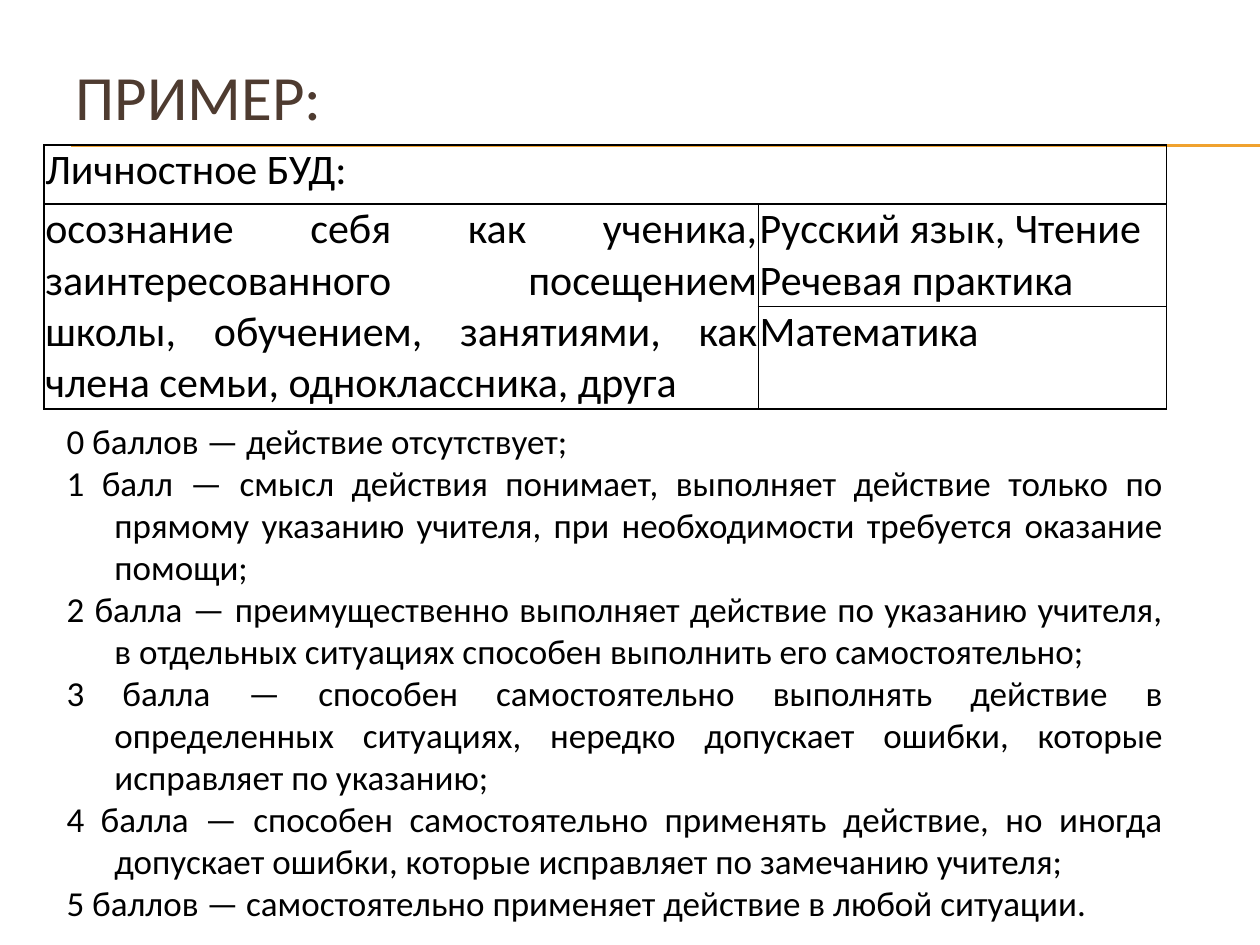
import dataclasses

import pptx
import pptx.dml.color
import pptx.enum.shapes
import pptx.enum.text
import pptx.oxml.ns
import pptx.util
from lxml import etree

RGB = pptx.dml.color.RGBColor
Inches = pptx.util.Inches
Pt = pptx.util.Pt
ALIGN = pptx.enum.text.PP_ALIGN
ANCHOR = pptx.enum.text.MSO_ANCHOR
qn = pptx.oxml.ns.qn


@dataclasses.dataclass(frozen=True)
class Theme:
    font: str = "Calibri"
    title_size: int = 36
    table_size: int = 24
    body_size: int = 20
    title: str = "4E3B30"
    text: str = "000000"
    rule: str = "F0A22E"
    rule_width: float = 0.75
    border_width: float = 1


THEME = Theme()
WIDTH, HEIGHT = 10, 7.5
COLUMNS = (5.67, 3.24)
ROWS = (0.47, 0.81, 0.81)
HANGING = 0.38

SKILL = (
    "осознание себя как ученика, заинтересованного посещением школы, "
    "обучением, занятиями, как члена семьи, одноклассника, друга"
)
SCALE = (
    "0 баллов — действие отсутствует;",
    "1 балл — смысл действия понимает, выполняет действие только по прямому "
    "указанию учителя, при необходимости требуется оказание помощи;",
    "2 балла — преимущественно выполняет действие по указанию учителя, "
    "в отдельных ситуациях способен выполнить его самостоятельно;",
    "3 балла — способен самостоятельно выполнять действие в определенных "
    "ситуациях, нередко допускает ошибки, которые исправляет по указанию;",
    "4 балла — способен самостоятельно применять действие, но иногда "
    "допускает ошибки, которые исправляет по замечанию учителя;",
    "5 баллов — самостоятельно применяет действие в любой ситуации.",
)


def write(tf, text, size, color, align):
    tf.text = text
    for p in tf.paragraphs:
        p.alignment = align
        for r in p.runs:
            r.font.name = THEME.font
            r.font.size = Pt(size)
            r.font.color.rgb = RGB.from_string(color)


def add_rule(s, y):
    line = s.shapes.add_connector(
        pptx.enum.shapes.MSO_CONNECTOR.STRAIGHT,
        Inches(0.56), Inches(y), Inches(WIDTH), Inches(y))
    line.line.color.rgb = RGB.from_string(THEME.rule)
    line.line.width = Pt(THEME.rule_width)
    etree.SubElement(line._element.spPr, qn("a:effectLst"))


def set_title(s, text):
    title = s.shapes.title
    title.left, title.top = Inches(0.05 * WIDTH), Inches(0.13)
    title.width, title.height = Inches(0.9 * WIDTH), Inches(1.25)
    title.text_frame.vertical_anchor = ANCHOR.MIDDLE
    write(title.text_frame, text, THEME.title_size, THEME.title, ALIGN.LEFT)


def format_cell(cell):
    cell.margin_left = cell.margin_right = Inches(0.01)
    cell.margin_top = cell.margin_bottom = 0
    cell.vertical_anchor = ANCHOR.TOP
    props = cell._tc.get_or_add_tcPr()
    for side in ("L", "R", "T", "B"):
        border = etree.SubElement(props, qn(f"a:ln{side}"), w=str(Pt(THEME.border_width)))
        fill = etree.SubElement(border, qn("a:solidFill"))
        etree.SubElement(fill, qn("a:srgbClr"), val=THEME.text)
    cell.fill.background()


def add_skill_table(s):
    table = s.shapes.add_table(
        len(ROWS), len(COLUMNS), Inches(0.35), Inches(1.15),
        Inches(sum(COLUMNS)), Inches(sum(ROWS))).table
    table.first_row = table.horz_banding = False
    for column, width in zip(table.columns, COLUMNS):
        column.width = Inches(width)
    for row, height in zip(table.rows, ROWS):
        row.height = Inches(height)
    for cell in table.iter_cells():
        format_cell(cell)
    table.cell(0, 0).merge(table.cell(0, 1))
    table.cell(1, 0).merge(table.cell(2, 0))
    texts = {
        (0, 0): "Личностное БУД:",
        (1, 0): SKILL,
        (1, 1): "Русский язык, Чтение \nРечевая практика",
        (2, 1): "Математика",
    }
    for (row, column), text in texts.items():
        write(table.cell(row, column).text_frame, text,
              THEME.table_size, THEME.text, ALIGN.JUSTIFY)


def add_scale(s):
    box = s.shapes.add_textbox(Inches(0.43), Inches(3.28), Inches(8.9), Inches(4.14))
    tf = box.text_frame
    tf.word_wrap = True
    write(tf, "\n".join(SCALE), THEME.body_size, THEME.text, ALIGN.JUSTIFY)
    for p in tf.paragraphs:
        props = p._p.get_or_add_pPr()
        props.set("marL", str(Inches(HANGING)))
        props.set("indent", str(-Inches(HANGING)))


def main():
    prs = pptx.Presentation()
    prs.slide_width, prs.slide_height = Inches(WIDTH), Inches(HEIGHT)
    s = prs.slides.add_slide(prs.slide_layouts[5])
    for y in (1.15, 1.16):
        add_rule(s, y)
    set_title(s, "ПРИМЕР:")
    add_skill_table(s)
    add_scale(s)
    prs.save("out.pptx")


if __name__ == "__main__":
    main()
